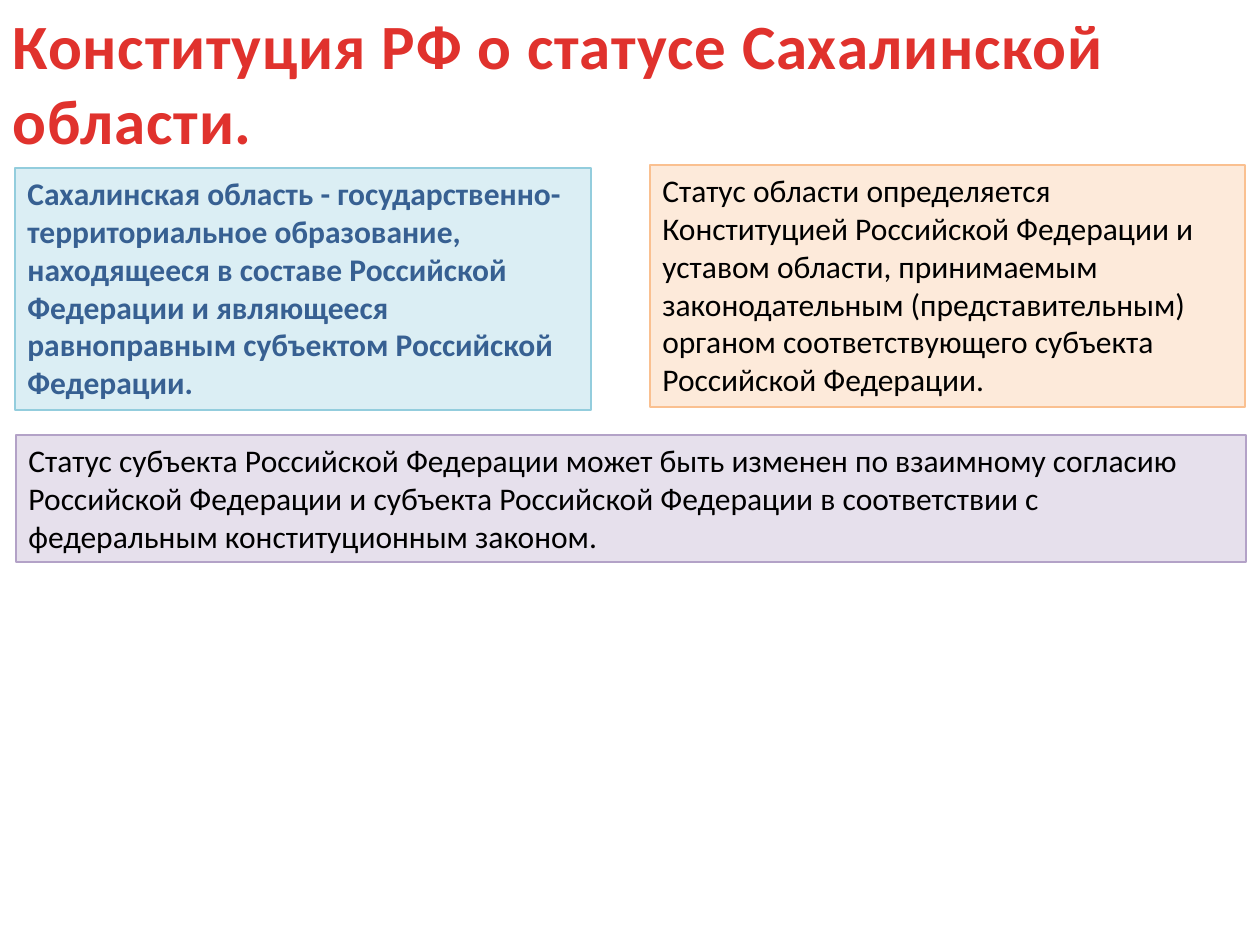
from dataclasses import dataclass

from pptx import Presentation
from pptx import util as u
from pptx.dml.color import RGBColor
from pptx.enum import shapes, text


@dataclass(frozen=True)
class Theme:
    font: str = "Calibri"
    head: int = 36
    body: int = 18
    red: str = "E0322D"
    wine: str = "A2201C"
    navy: str = "376092"
    black: str = "000000"
    aqua: tuple = ("DBEEF4", "93CDDD")
    peach: tuple = ("FDEADA", "FAC090")
    lilac: tuple = ("E6E0EC", "B3A2C7")


THEME = Theme()
SCALE = 914400 / 126


def px(num):
    return u.Emu(round(num * SCALE))


def rgb(code):
    return RGBColor.from_string(code)


def put_text(shape, words, size, anchor):
    frame = shape.text_frame
    frame.text = words
    frame.word_wrap = True
    frame.auto_size = text.MSO_AUTO_SIZE.SHAPE_TO_FIT_TEXT
    frame.vertical_anchor = anchor
    line = frame.paragraphs[0]
    line.alignment = text.PP_ALIGN.LEFT
    run = line.runs[0]
    run.font.name = THEME.font
    run.font.size = u.Pt(size)
    return run


def add_title(slide, words, area):
    title = slide.shapes.title
    title.left, title.top, title.width, title.height = map(px, area)
    run = put_text(title, words, THEME.head, text.MSO_ANCHOR.TOP)
    run.font.bold = True
    fill = run.font.fill
    fill.gradient()
    fill.gradient_angle = 270
    marks = ((0.25, THEME.red), (1, THEME.wine))
    for stop, (place, code) in zip(fill.gradient_stops, marks):
        stop.position = place
        stop.color.rgb = rgb(code)
    run.font._element.set("spc", "50")


def add_panel(slide, words, area, tint, ink=THEME.black, bold=False):
    panel = slide.shapes.add_shape(shapes.MSO_SHAPE.RECTANGLE, *map(px, area))
    panel.shadow.inherit = False
    back, edge = tint
    panel.fill.solid()
    panel.fill.fore_color.rgb = rgb(back)
    panel.line.color.rgb = rgb(edge)
    panel.line.width = u.Pt(0.75)
    run = put_text(panel, words, THEME.body, text.MSO_ANCHOR.TOP)
    run.font.bold = bold
    run.font.color.rgb = rgb(ink)


def main():
    deck = Presentation()
    deck.slide_width, deck.slide_height = px(1260), px(945)
    slide = deck.slides.add_slide(deck.slide_layouts[5])
    add_title(slide, "Конституция РФ о статусе Сахалинской области.", (0, 0, 1260, 165))
    add_panel(
        slide,
        "Сахалинская область - государственно-территориальное образование, "
        "находящееся в составе Российской Федерации и являющееся "
        "равноправным субъектом Российской Федерации.",
        (15, 168, 576, 242), THEME.aqua, THEME.navy, True,
    )
    add_panel(
        slide,
        "Статус области определяется Конституцией Российской Федерации и "
        "уставом области, принимаемым законодательным (представительным) "
        "органом соответствующего субъекта Российской Федерации.",
        (650, 165, 595, 242), THEME.peach,
    )
    add_panel(
        slide,
        "Статус субъекта Российской Федерации может быть изменен по взаимному "
        "согласию Российской Федерации и субъекта Российской Федерации в "
        "соответствии с федеральным конституционным законом.",
        (16, 435, 1230, 127), THEME.lilac,
    )
    deck.save("out.pptx")


if __name__ == "__main__":
    main()
